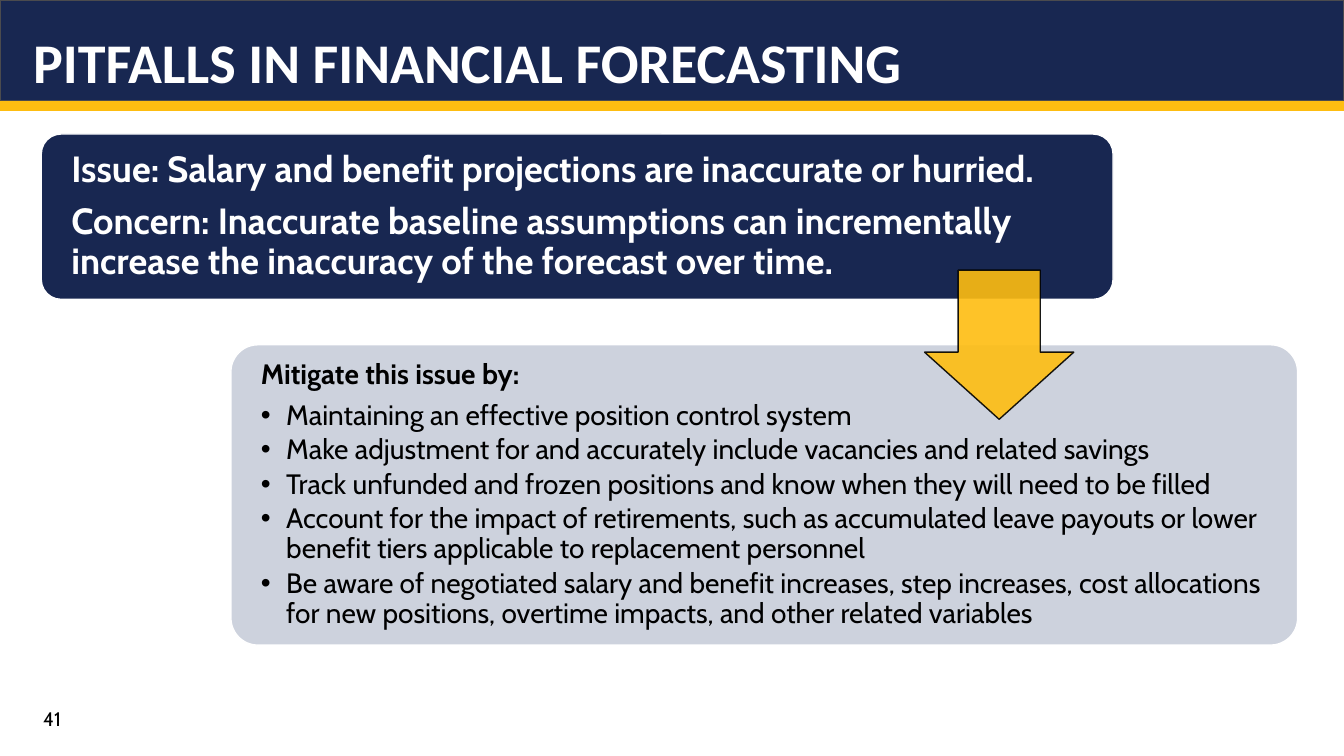
from lxml.etree import SubElement
from pptx import Presentation
from pptx.dml.color import RGBColor
from pptx.enum.shapes import MSO_SHAPE as SHAPE
from pptx.enum.text import MSO_ANCHOR as ANCHOR, PP_ALIGN as ALIGN
from pptx.oxml.ns import qn
from pptx.util import Inches, Pt

NAVY = RGBColor(0x18, 0x27, 0x51)
GOLD = RGBColor(0xFE, 0xBD, 0x11)
PALE = RGBColor(0xCD, 0xD2, 0xDD)
GRAY = RGBColor(0x4B, 0x4B, 0x4E)
WHITE = RGBColor(0xFF, 0xFF, 0xFF)
BLACK = RGBColor(0x00, 0x00, 0x00)

prs = Presentation()
prs.slide_width, prs.slide_height = Inches(13.33), Inches(7.5)
s = prs.slides.add_slide(prs.slide_layouts[6])


def add_block(kind, left, top, width, height, fill, line=None):
    sp = s.shapes.add_shape(kind, Inches(left), Inches(top), Inches(width), Inches(height))
    sp.shadow.inherit = False
    sp.fill.solid()
    sp.fill.fore_color.rgb = fill
    if line is None:
        sp.line.fill.background()
    else:
        sp.line.color.rgb = line
        sp.line.width = Pt(1)
    return sp


def write(sp, texts, size, color=BLACK, font="Cabin", bold=False, spacing=1.0, after=0,
          anchor=ANCHOR.TOP, inset=(0.1, 0.05), heading_after=None):
    """Fill a shape with paragraphs; with heading_after, all but the first are bulleted."""
    tf = sp.text_frame
    tf.word_wrap = True
    tf.vertical_anchor = anchor
    tf.margin_left = tf.margin_right = Inches(inset[0])
    tf.margin_top = tf.margin_bottom = Inches(inset[1])
    for i, text in enumerate(texts):
        p = tf.paragraphs[0] if i == 0 else tf.add_paragraph()
        p.alignment = ALIGN.LEFT
        p.line_spacing = spacing
        is_heading = heading_after is not None and i == 0
        p.space_after = Pt(heading_after if is_heading else after)
        if heading_after is not None and i > 0:
            pPr = p._p.get_or_add_pPr()
            pPr.set("marL", str(Inches(0.25)))
            pPr.set("indent", str(Inches(-0.25)))
            SubElement(pPr, qn("a:buFont")).set("typeface", "Arial")
            SubElement(pPr, qn("a:buChar")).set("char", "•")
        r = p.add_run()
        r.text = text
        r.font.name, r.font.size = font, Pt(size)
        r.font.bold = bold or is_heading
        r.font.color.rgb = color


# Header band
add_block(SHAPE.RECTANGLE, 0, 1, 13.33, 0.1, GOLD)
header = add_block(SHAPE.RECTANGLE, 0, 0, 13.33, 1, NAVY, GRAY)
write(header, ["PITFALLS IN FINANCIAL FORECASTING"], 40, WHITE, "Calibri", bold=True,
      spacing=0.9, anchor=ANCHOR.BOTTOM, inset=(0.33, 0.05))

# Issue and mitigation panels
issue = add_block(SHAPE.ROUNDED_RECTANGLE, 0.41, 1.33, 10.63, 1.64, NAVY, WHITE)
issue.adjustments[0] = 0.12
write(issue, [
    "Issue: Salary and benefit projections are inaccurate or hurried.",
    "Concern: Inaccurate baseline assumptions can incrementally increase the inaccuracy "
    "of the forecast over time.",
], 26, WHITE, bold=True, spacing=0.9, after=9, anchor=ANCHOR.MIDDLE, inset=(0.24, 0.12))

mitigation = add_block(SHAPE.ROUNDED_RECTANGLE, 2.29, 3.42, 10.58, 2.98, PALE, WHITE)
mitigation.adjustments[0] = 0.09
write(mitigation, [
    "Mitigate this issue by:",
    "Maintaining an effective position control system",
    "Make adjustment for and accurately include vacancies and related savings",
    "Track unfunded and frozen positions and know when they will need to be filled",
    "Account for the impact of retirements, such as accumulated leave payouts or lower "
    "benefit tiers applicable to replacement personnel",
    "Be aware of negotiated salary and benefit increases, step increases, cost allocations "
    "for new positions, overtime impacts, and other related variables",
], 20, spacing=0.9, after=3, anchor=ANCHOR.MIDDLE, inset=(0.22, 0.1), heading_after=7.5)

# Arrow from issue to mitigation
arrow = add_block(SHAPE.DOWN_ARROW, 9.17, 2.68, 1.48, 1.48, GOLD, BLACK)
arrow.adjustments[0] = 0.55
arrow.adjustments[1] = 0.45
for color in arrow._element.spPr.iter(qn("a:srgbClr")):
    SubElement(color, qn("a:alpha")).set("val", "90000")

# Slide number
number = s.shapes.add_textbox(Inches(0.33), Inches(6.96), Inches(2.07), Inches(0.34))
write(number, ["41"], 14)

prs.save("out.pptx")
